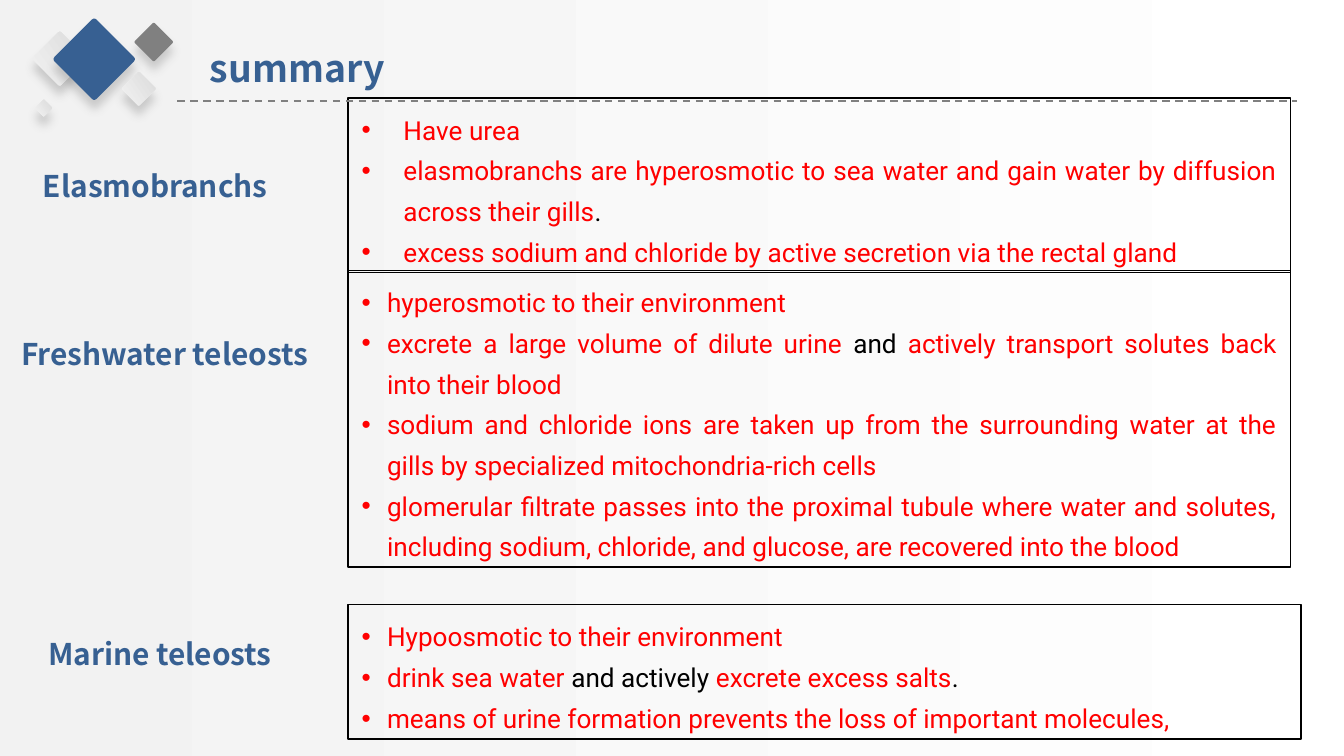
from dataclasses import dataclass

from lxml import etree
from pptx import Presentation
from pptx.dml.color import RGBColor
from pptx.enum.dml import MSO_LINE
from pptx.enum.shapes import MSO_CONNECTOR, MSO_SHAPE
from pptx.enum.text import MSO_ANCHOR, MSO_AUTO_SIZE, PP_ALIGN
from pptx.oxml.ns import qn
from pptx.util import Cm, Pt

DASH = MSO_LINE.DASH
STRAIGHT = MSO_CONNECTOR.STRAIGHT
ROUNDED = MSO_SHAPE.ROUNDED_RECTANGLE
TOP, MIDDLE = MSO_ANCHOR.TOP, MSO_ANCHOR.MIDDLE
NO_FIT = MSO_AUTO_SIZE.NONE
LEFT, JUSTIFY = PP_ALIGN.LEFT, PP_ALIGN.JUSTIFY
COMPARISON_LAYOUT = 3 + 1


@dataclass(frozen=True)
class Theme:
    accent: str = "376092"
    grey: str = "808080"
    pale: str = "F2F2F2"
    silver: str = "DBDBDB"
    white: str = "FFFFFF"
    shadow: str = "595959"
    fact: str = "FF0000"
    plain: str = "000000"
    heading_font: str = "Noto Sans CJK SC"
    fact_font: str = "Roboto"
    title_size: int = 20
    label_size: int = 16
    fact_size: int = 14


THEME = Theme()

TILES = [
    (0.76, 0.74, 0.74, None),
    (1.22, 0.56, 1.12, THEME.accent),
    (2.64, 0.53, 0.53, THEME.grey),
    (2.39, 1.45, 0.46, None),
    (0.71, 1.93, 0.23, None),
]

# Facts are split into segments that alternate between highlighted and plain.
SECTIONS = [
    ("Elasmobranchs", (0.56, 3.05, 6.27, 0.94), (6.58, 1.85, 17.81, 3.3), 0.79, [
        ["Have urea"],
        ["elasmobranchs are hyperosmotic to sea water and gain water by "
         "diffusion across their gills", "."],
        ["excess sodium and chloride by active secretion via the rectal gland"],
    ]),
    ("Freshwater teleosts", (0.15, 6.22, 6.27, 0.94), (6.58, 5.11, 17.81, 5.61), 0.48, [
        ["hyperosmotic to their environment"],
        ["excrete a large volume of dilute urine ", "and ",
         "actively transport solutes back into their blood"],
        ["sodium and chloride ions are taken up from the surrounding water at "
         "the gills by specialized mitochondria-rich cells"],
        ["glomerular filtrate passes into the proximal tubule where water and "
         "solutes, including sodium, chloride, and glucose, are recovered into "
         "the blood"],
    ]),
    ("Marine teleosts", (0.66, 11.89, 6.27, 1.63), (6.58, 11.43, 18.01, 2.54), 0.48, [
        ["Hypoosmotic to their environment"],
        ["drink sea water ", "and actively ", "excrete excess salts", "."],
        ["means of urine formation prevents the loss of important molecules,"],
    ]),
]


def rgb(colour):
    return RGBColor.from_string(colour)


def place(shape, box):
    shape.left, shape.top, shape.width, shape.height = map(Cm, box)


def style(font, name, size, colour, bold):
    font.name, font.size, font.bold = name, Pt(size), bold
    font.color.rgb = rgb(colour)


def fill_gradient(fill, start, end, angle):
    fill.gradient()
    fill.gradient_angle = angle
    for stop, colour in zip(fill.gradient_stops, (start, end)):
        stop.color.rgb = rgb(colour)


def cast_shadow(shape):
    effects = etree.SubElement(shape._element.spPr, qn("a:effectLst"))
    shadow = etree.SubElement(
        effects, qn("a:outerShdw"), blurRad=str(Pt(5)), dist=str(Pt(5)),
        dir="5400000", algn="t", rotWithShape="0")
    colour = etree.SubElement(shadow, qn("a:srgbClr"), val=THEME.shadow)
    etree.SubElement(colour, qn("a:alpha"), val="25000")


def add_tiles(slide, left, top):
    for dx, dy, side, colour in TILES:
        tile = slide.shapes.add_shape(
            ROUNDED, Cm(left + dx), Cm(top + dy), Cm(side), Cm(side))
        tile.adjustments[0] = 0.05
        tile.rotation = 45
        tile.line.fill.background()
        if colour:
            tile.fill.solid()
            tile.fill.fore_color.rgb = rgb(colour)
        else:
            fill_gradient(tile.fill, THEME.pale, THEME.silver, 80)
        cast_shadow(tile)


def add_header(slide, box):
    left, top, width, height = box
    rule = slide.shapes.add_connector(
        STRAIGHT, Cm(left + 3.35), Cm(top + height), Cm(left + width), Cm(top + height))
    rule.line.color.rgb = rgb(THEME.grey)
    rule.line.width = Pt(1)
    rule.line.dash_style = DASH
    etree.SubElement(rule._element.spPr, qn("a:effectLst"))
    add_tiles(slide, left, top)

    title = slide.shapes.title
    place(title, (left + 3.71, top + 0.71, 3.84, 1.12))
    frame = title.text_frame
    frame.text = "summary"
    frame.word_wrap, frame.auto_size = False, NO_FIT
    frame.vertical_anchor = MIDDLE
    heading = frame.paragraphs[0]
    heading.alignment = LEFT
    style(heading.font, THEME.heading_font, THEME.title_size, THEME.accent, True)


def add_label(slide, box, group):
    label = slide.shapes.add_textbox(*map(Cm, box))
    label.text_frame.word_wrap = True
    label.text_frame.text = group
    style(label.text_frame.paragraphs[0].font,
          THEME.heading_font, THEME.label_size, THEME.accent, True)


def fill_facts(panel, box, indent, facts):
    place(panel, box)
    panel.line.color.rgb = rgb(THEME.plain)
    panel.line.width = Pt(0.75)
    frame = panel.text_frame
    frame.word_wrap, frame.auto_size = True, NO_FIT
    frame.vertical_anchor = TOP
    for number, segments in enumerate(facts):
        fact = frame.add_paragraph() if number else frame.paragraphs[0]
        fact.alignment = JUSTIFY
        fact.line_spacing = 1.3
        fact.space_before = Pt(0)
        properties = fact._p.get_or_add_pPr()
        properties.set("marL", str(Cm(indent)))
        properties.set("indent", str(-Cm(indent)))
        etree.SubElement(properties, qn("a:buFont"), typeface="Arial")
        etree.SubElement(properties, qn("a:buChar"), char="•")
        style(fact.font, THEME.fact_font, THEME.fact_size, THEME.fact, False)
        for position, text in enumerate(segments):
            segment = fact.add_run()
            segment.text = text
            if position % 2:
                segment.font.color.rgb = rgb(THEME.plain)


def main():
    deck = Presentation()
    deck.slide_width, deck.slide_height = Cm(25.4), Cm(14.29)
    slide = deck.slides.add_slide(deck.slide_layouts[COMPARISON_LAYOUT])
    fill_gradient(slide.background.fill, THEME.pale, THEME.white, 0)
    add_header(slide, (0, 0, 24.51, 1.91))

    _, *panels, spare = slide.placeholders
    spare._element.getparent().remove(spare._element)
    for panel, (group, label_box, facts_box, indent, facts) in zip(panels, SECTIONS):
        add_label(slide, label_box, group)
        fill_facts(panel, facts_box, indent, facts)
    deck.save("out.pptx")


if __name__ == "__main__":
    main()
